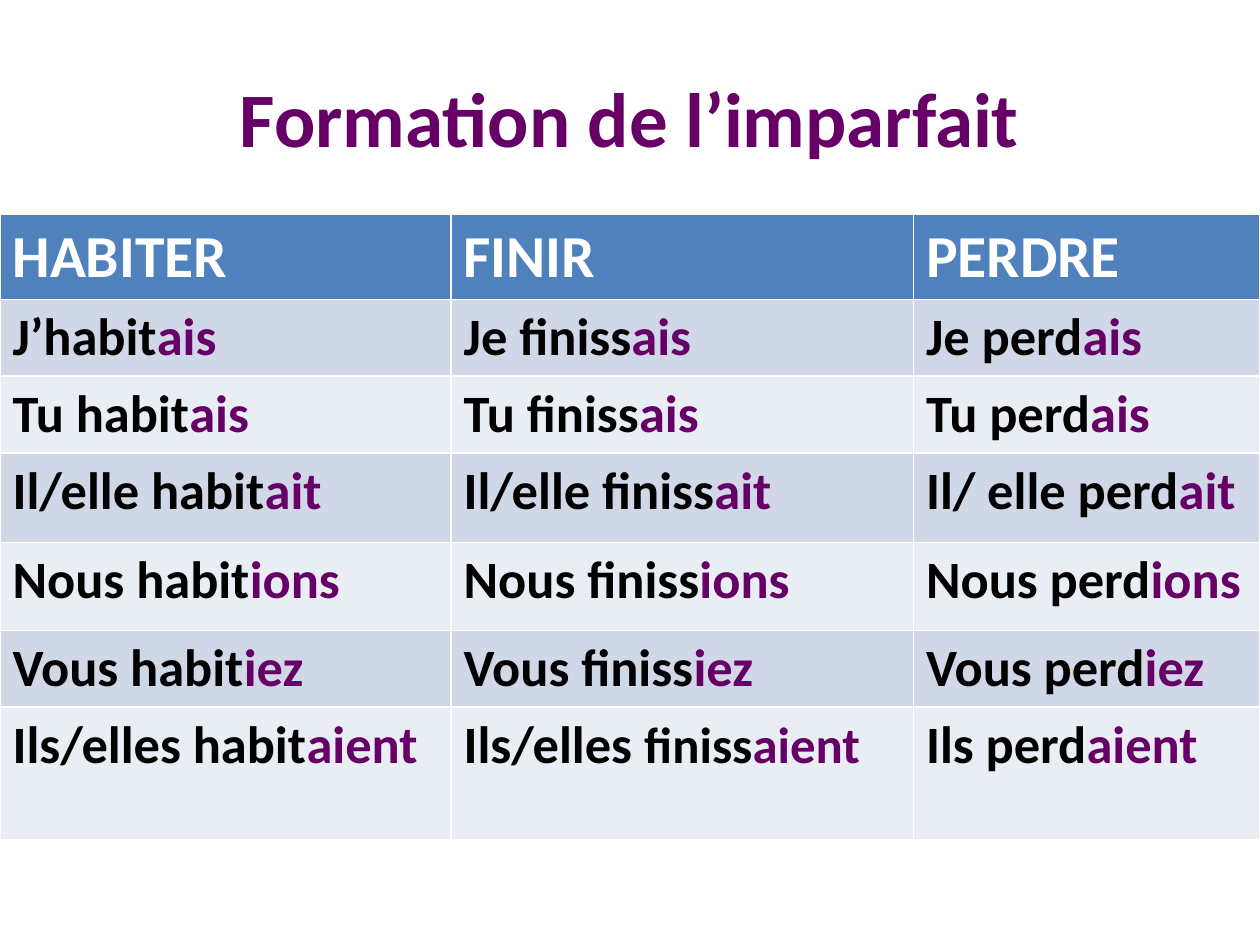
from pptx import Presentation
from pptx.dml.color import RGBColor
from pptx.enum.text import MSO_ANCHOR, PP_ALIGN
from pptx.util import Inches, Pt

COLORS = {
    "purple": "660066",
    "black": "000000",
    "white": "FFFFFF",
    "header": "4F81BD",
    "odd": "D0D8E8",
    "even": "E9EDF4",
}
VERBS = ["HABITER", "FINIR", "PERDRE"]
# Each row: the stems for the three verbs, then their shared ending
CONJUGATION = [
    (["J’habit", "Je finiss", "Je perd"], "ais"),
    (["Tu habit", "Tu finiss", "Tu perd"], "ais"),
    (["Il/elle habit", "Il/elle finiss", "Il/ elle perd"], "ait"),
    (["Nous habit", "Nous finiss", "Nous perd"], "ions"),
    (["Vous habit", "Vous finiss", "Vous perd"], "iez"),
    (["Ils/elles habit", "Ils/elles finiss", "Ils perd"], "aient"),
]
COLUMN_WIDTHS = [3.58, 3.67, 2.75]
ROW_HEIGHTS = [0.63, 0.57, 0.57, 0.71, 0.7, 0.57, 1.05]


def add_run(paragraph, text, size, color):
    run = paragraph.add_run()
    run.text = text
    run.font.name = "Calibri"
    run.font.size = Pt(size)
    run.font.bold = True
    run.font.color.rgb = RGBColor.from_string(COLORS[color])


def fill_cell(cell, color, runs):
    cell.fill.solid()
    cell.fill.fore_color.rgb = RGBColor.from_string(COLORS[color])
    for text, size, text_color in runs:
        add_run(cell.text_frame.paragraphs[0], text, size, text_color)


prs = Presentation()
prs.slide_width, prs.slide_height = Inches(10), Inches(7.5)
slide = prs.slides.add_slide(prs.slide_layouts[5])

# Title
title = slide.shapes.title
title.left, title.top = Inches(0.5), Inches(0.3)
title.width, title.height = Inches(9), Inches(1.25)
title.text_frame.vertical_anchor = MSO_ANCHOR.MIDDLE
heading = title.text_frame.paragraphs[0]
heading.alignment = PP_ALIGN.CENTER
add_run(heading, "Formation de l’imparfait", 44, "purple")

# Conjugation table; the default table style draws the white borders
table = slide.shapes.add_table(
    len(ROW_HEIGHTS), len(COLUMN_WIDTHS),
    Inches(0), Inches(1.7), Inches(10), Inches(sum(ROW_HEIGHTS)),
).table
for column, width in zip(table.columns, COLUMN_WIDTHS):
    column.width = Inches(width)
for row, height in zip(table.rows, ROW_HEIGHTS):
    row.height = Inches(height)

# Header row
for col, verb in enumerate(VERBS):
    fill_cell(table.cell(0, col), "header", [(verb, 34, "white")])

# Verb forms, with the ending in purple
for row, (stems, ending) in enumerate(CONJUGATION, start=1):
    band = "odd" if row % 2 else "even"
    for col, stem in enumerate(stems):
        if stem == "Ils/elles finiss":  # slightly smaller to fit its column
            runs = [("Ils/elles ", 30, "black"), ("finiss", 29, "black"),
                    (ending, 29, "purple")]
        else:
            runs = [(stem, 30, "black"), (ending, 30, "purple")]
        fill_cell(table.cell(row, col), band, runs)

prs.save("out.pptx")
